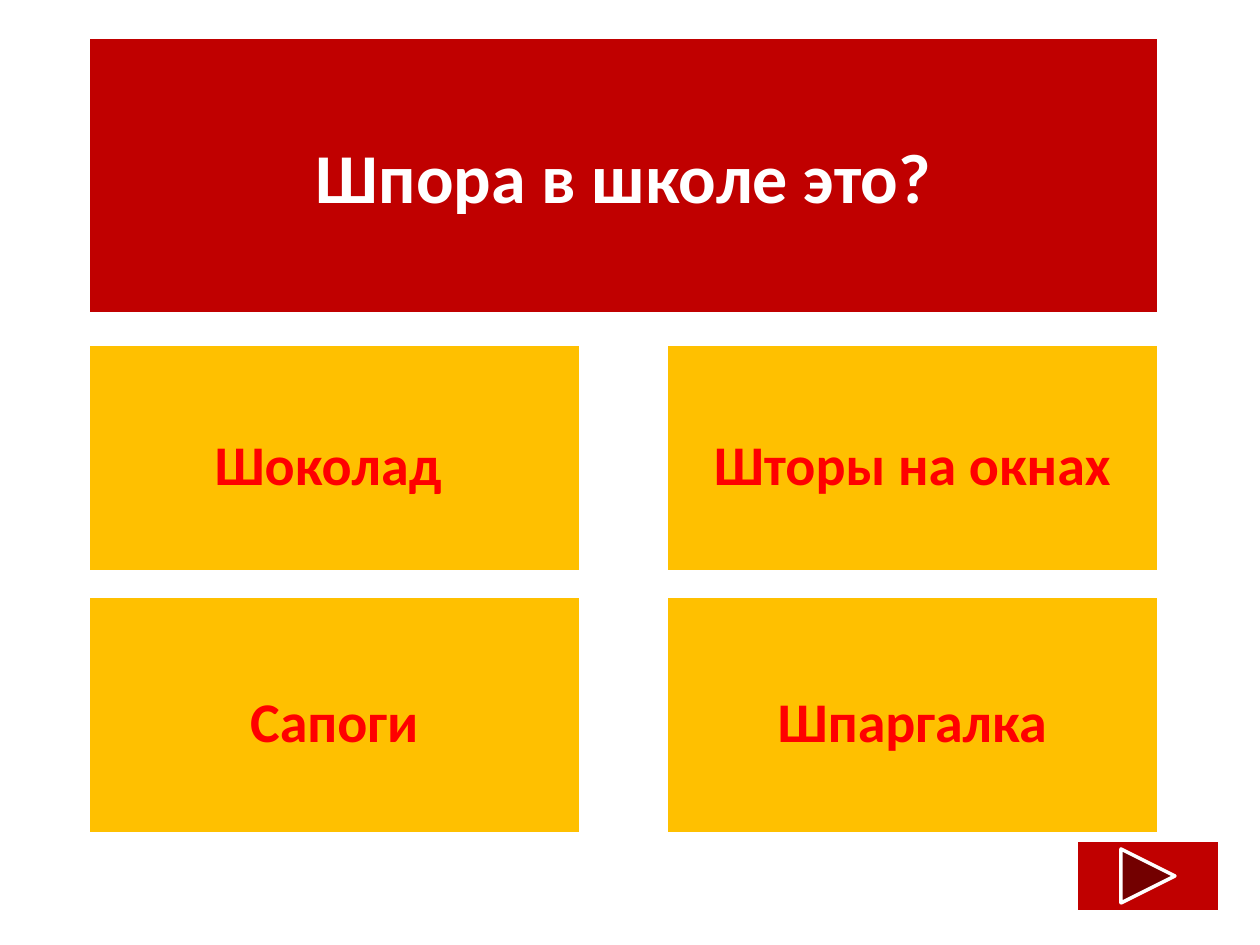
from dataclasses import dataclass
from pptx import Presentation
from pptx.dml.color import RGBColor
from pptx.enum.shapes import MSO_SHAPE
from pptx.enum.text import MSO_ANCHOR, PP_ALIGN
from pptx.util import Emu, Pt

# Content
ASK = "Шпора в школе это?"
PICKS = [
    ["Шоколад ", "Шторы на окнах"],
    ["Сапоги", "Шпаргалка"],
]


@dataclass(frozen=True)
class Theme:
    font: str = "Calibri"
    red: str = "C00000"
    gold: str = "FFC000"
    white: str = "FFFFFF"
    bright: str = "FF0000"
    ask: int = 40
    pick: int = 32
    line: int = 2


THEME = Theme()

# Layout in px, 126 to the inch
SCALE = 914400 // 126
LEFT, WIDE = 88, 1071
CELL = 493
ROWS = [(344, 228), (596, 238)]  # top, height


def px(n):
    return Emu(n * SCALE)


def add_box(slide, kind, box, fill):
    shape = slide.shapes.add_shape(kind, *map(px, box))
    shape.shadow.inherit = False
    shape.fill.solid()
    shape.fill.fore_color.rgb = RGBColor.from_string(fill)
    shape.line.color.rgb = RGBColor.from_string(THEME.white)
    shape.line.width = Pt(THEME.line)
    return shape


def add_text(shape, text, size, color):
    frame = shape.text_frame
    frame.word_wrap = True
    frame.vertical_anchor = MSO_ANCHOR.MIDDLE
    para = frame.paragraphs[0]
    para.text = text
    para.alignment = PP_ALIGN.CENTER
    font = para.font
    font.name, font.size, font.bold = THEME.font, Pt(size), True
    font.color.rgb = RGBColor.from_string(color)
    return para


def main():
    deck = Presentation()
    deck.slide_width, deck.slide_height = px(1260), px(945)
    slide = deck.slides.add_slide(deck.slide_layouts[6])

    # Question
    head = add_box(slide, MSO_SHAPE.RECTANGLE, (LEFT, 37, WIDE, 277), THEME.red)
    add_text(head, ASK, THEME.ask, THEME.white)

    # Answers: two columns that meet the edges of the question
    for (top, high), picks in zip(ROWS, PICKS):
        for col, text in enumerate(picks):
            left = LEFT + col * (WIDE - CELL)
            card = add_box(slide, MSO_SHAPE.RECTANGLE, (left, top, CELL, high), THEME.gold)
            para = add_text(card, text, THEME.pick, THEME.bright)
            para.line_spacing = 1.15
            para.space_after = Pt(10)

    # Next button
    add_box(slide, MSO_SHAPE.ACTION_BUTTON_FORWARD_OR_NEXT, (1076, 840, 144, 72), THEME.red)

    deck.save("out.pptx")


if __name__ == "__main__":
    main()
